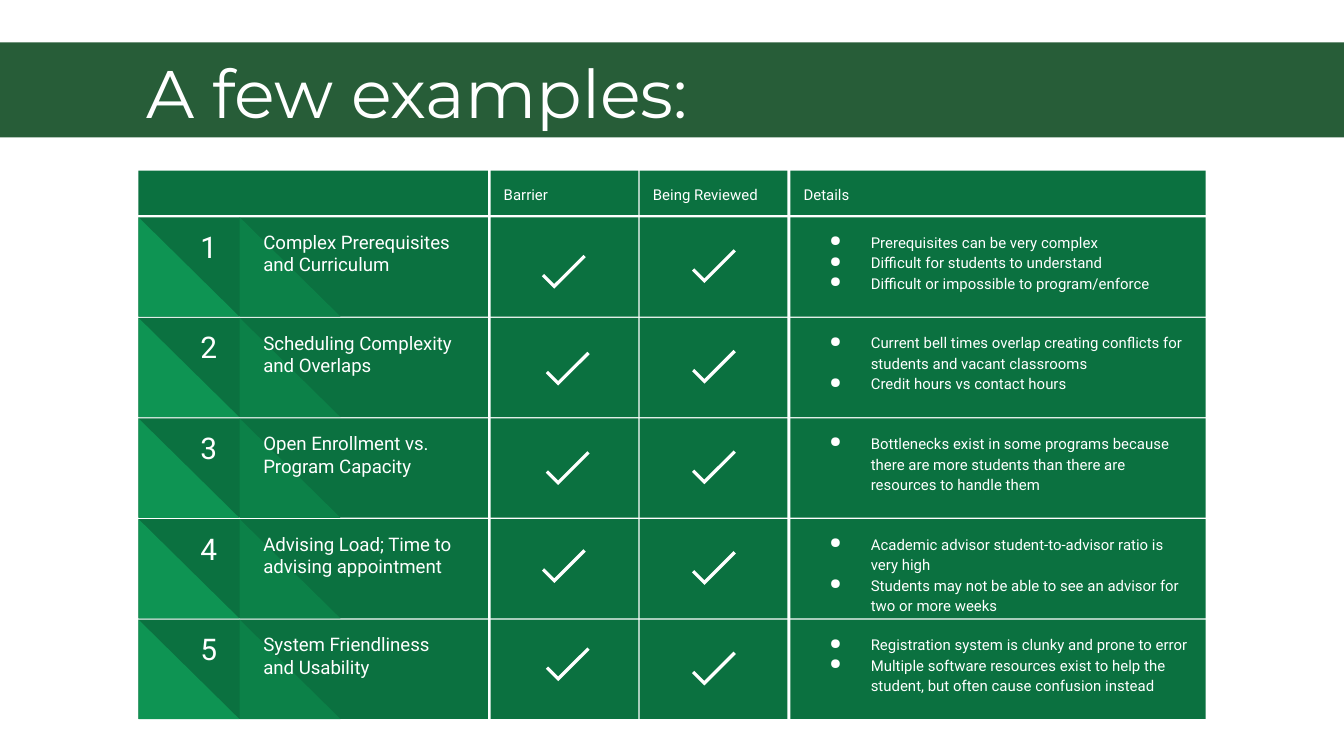
import pptx
import pptx.dml.color
import pptx.enum.shapes
import pptx.enum.text
import pptx.oxml.ns
import pptx.util
import lxml.etree

Pt = pptx.util.Pt
SHAPE = pptx.enum.shapes.MSO_SHAPE
ANCHOR = pptx.enum.text.MSO_ANCHOR
ALIGN = pptx.enum.text.PP_ALIGN

WHITE = "FFFFFF"
BANNER_GREEN = "275D38"
CELL_GREEN = "0B7140"
SHADE_GREEN = "0C8148"
BRIGHT_GREEN = "0E9453"

TOPIC_COLUMN = (74.2, 187.2)
BARRIER_COLUMN = (262.8, 79.2)
REVIEWED_COLUMN = (342.7, 79.2)
DETAILS_COLUMN = (423.4, 222.5)
HEADER_TOP, HEADER_HEIGHT = 91.4, 23.8
FIRST_ROW_TOP, ROW_HEIGHT, ROW_PITCH = 116.4, 53.2, 53.9

ROWS = [
    ("Complex Prerequisites and Curriculum",
     ["Prerequisites can be very complex",
      "Difficult for students to understand",
      "Difficult or impossible to program/enforce"]),
    ("Scheduling Complexity and Overlaps",
     ["Current bell times overlap creating conflicts for students and vacant classrooms",
      "Credit hours vs contact hours"]),
    ("Open Enrollment vs. Program Capacity",
     ["Bottlenecks exist in some programs because there are more students than there are "
      "resources to handle them"]),
    ("Advising Load; Time to advising appointment",
     ["Academic advisor student-to-advisor ratio is very high",
      "Students may not be able to see an advisor for two or more weeks"]),
    ("System Friendliness and Usability",
     ["Registration system is clunky and prone to error",
      "Multiple software resources exist to help the student, "
      "but often cause confusion instead"]),
]
BARRIER_CHECKS = [(290.2, 138.2), (292.3, 190.1), (292.3, 243.4), (290.2, 295.9), (292.3, 348.5)]


def color(hex_string):
    return pptx.dml.color.RGBColor.from_string(hex_string)


def add_filled(shapes, kind, left, top, width, height, fill):
    shape = shapes.add_shape(kind, Pt(left), Pt(top), Pt(width), Pt(height))
    shape.shadow.inherit = False
    shape.fill.solid()
    shape.fill.fore_color.rgb = color(fill)
    shape.line.fill.background()
    return shape


def add_bullet(paragraph):
    properties = paragraph._p.get_or_add_pPr()
    properties.set("marL", str(Pt(36)))
    properties.set("indent", str(Pt(-22)))
    bullet_color = lxml.etree.SubElement(properties, pptx.oxml.ns.qn("a:buClr"))
    lxml.etree.SubElement(bullet_color, pptx.oxml.ns.qn("a:srgbClr"), val=WHITE)
    lxml.etree.SubElement(properties, pptx.oxml.ns.qn("a:buChar"), char="●")


def write(shape, lines, size, font="Roboto", anchor=ANCHOR.TOP, align=ALIGN.LEFT,
          spacing=None, bulleted=False):
    frame = shape.text_frame
    frame.word_wrap = True
    frame.vertical_anchor = anchor
    frame.margin_left = frame.margin_right = Pt(7.2)
    frame.margin_top = frame.margin_bottom = Pt(7.2)
    frame.text = "\n".join(lines)
    for paragraph in frame.paragraphs:
        paragraph.alignment = align
        if spacing:
            paragraph.line_spacing = spacing
        if bulleted:
            add_bullet(paragraph)
        for run in paragraph.runs:
            run.font.name = font
            run.font.size = Pt(size)
            run.font.color.rgb = color(WHITE)


def add_label(shapes, left, top, width, height, text, size, **style):
    box = shapes.add_textbox(Pt(left), Pt(top), Pt(width), Pt(height))
    write(box, [text], size, **style)


def add_check(shapes, left, top):
    check = add_filled(shapes, SHAPE.CORNER, left, top, 23.8, 9.4, WHITE)
    check.adjustments[0] = 0.188
    check.adjustments[1] = 0.181
    check.rotation = 315


def add_header(shapes):
    headings = [(TOPIC_COLUMN, ""), (BARRIER_COLUMN, "Barrier"),
                (REVIEWED_COLUMN, "Being Reviewed"), (DETAILS_COLUMN, "Details")]
    for (left, width), heading in headings:
        cell = add_filled(shapes, SHAPE.RECTANGLE, left, HEADER_TOP, width, HEADER_HEIGHT,
                          CELL_GREEN)
        if heading:
            write(cell, [heading], 8, anchor=ANCHOR.MIDDLE, spacing=1.15)


def add_row(slide, number, topic, details):
    shapes = slide.shapes.add_group_shape().shapes
    top = FIRST_ROW_TOP + (number - 1) * ROW_PITCH
    cells = [add_filled(shapes, SHAPE.RECTANGLE, left, top, width, ROW_HEIGHT, CELL_GREEN)
             for left, width in (TOPIC_COLUMN, BARRIER_COLUMN, REVIEWED_COLUMN, DETAILS_COLUMN)]
    write(cells[-1], details, 8, spacing=1.15, bulleted=True)
    for left, fill in ((128.4, SHADE_GREEN), (74.2, BRIGHT_GREEN)):
        add_filled(shapes, SHAPE.RIGHT_TRIANGLE, left, top, 54, ROW_HEIGHT, fill)
    add_label(shapes, 95, top, 33.8, 32.4, str(number), 16,
              anchor=ANCHOR.BOTTOM, align=ALIGN.CENTER)
    add_check(shapes, 370.6, top + 18.8)
    add_label(shapes, 134, top, 117.4, ROW_HEIGHT, topic, 10)


def main():
    presentation = pptx.Presentation()
    presentation.slide_width = Pt(720)
    presentation.slide_height = Pt(405)
    slide = presentation.slides.add_slide(presentation.slide_layouts[6])
    add_filled(slide.shapes, SHAPE.RECTANGLE, 0, 22.8, 720, 50.8, BANNER_GREEN)
    add_header(slide.shapes)
    for number, (topic, details) in enumerate(ROWS, start=1):
        add_row(slide, number, topic, details)
    add_label(slide.shapes, 71.4, 20.3, 574.6, 53.3, "A few examples:", 36, font="Montserrat")
    for left, top in BARRIER_CHECKS:
        add_check(slide.shapes, left, top)
    presentation.save("out.pptx")


if __name__ == "__main__":
    main()
